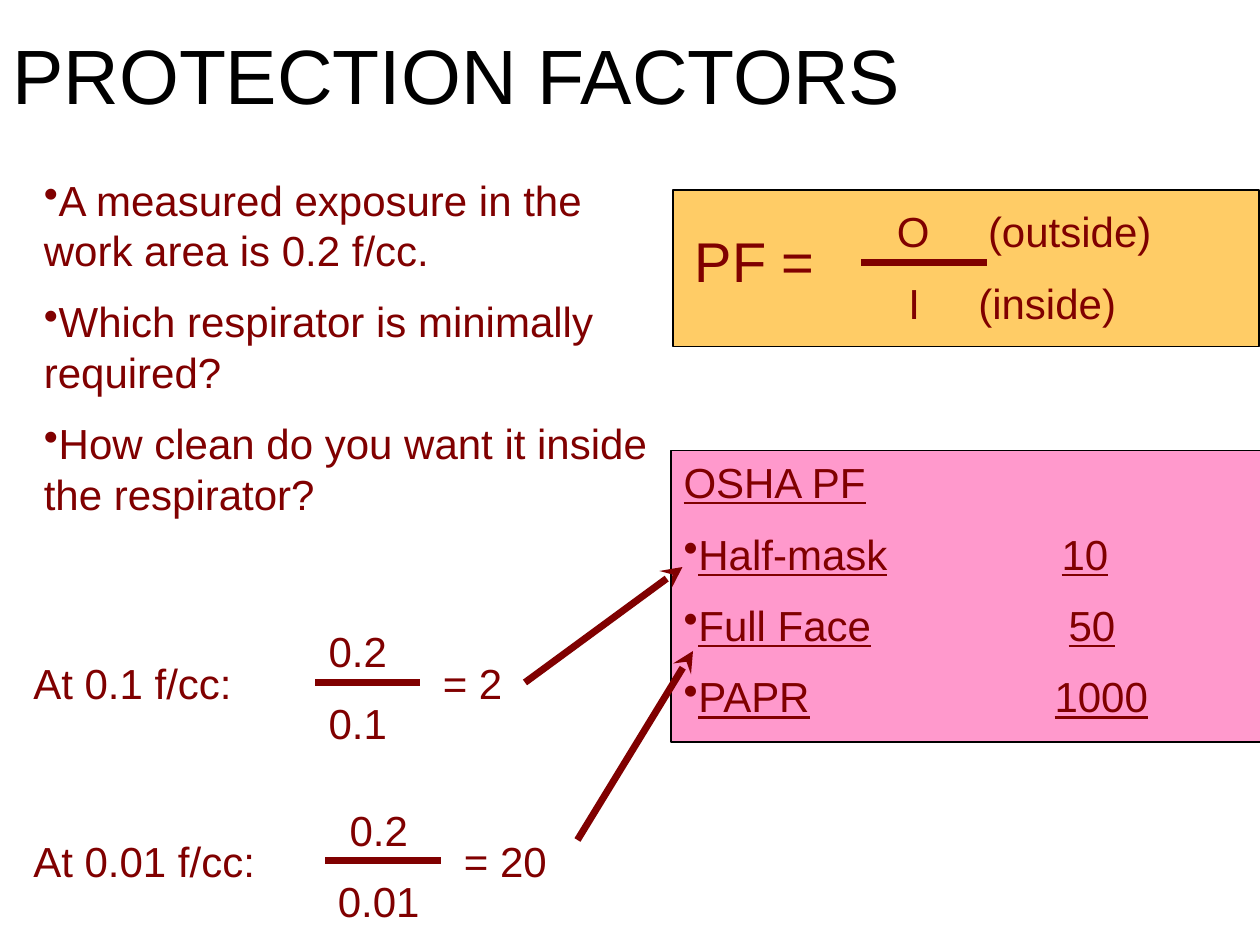
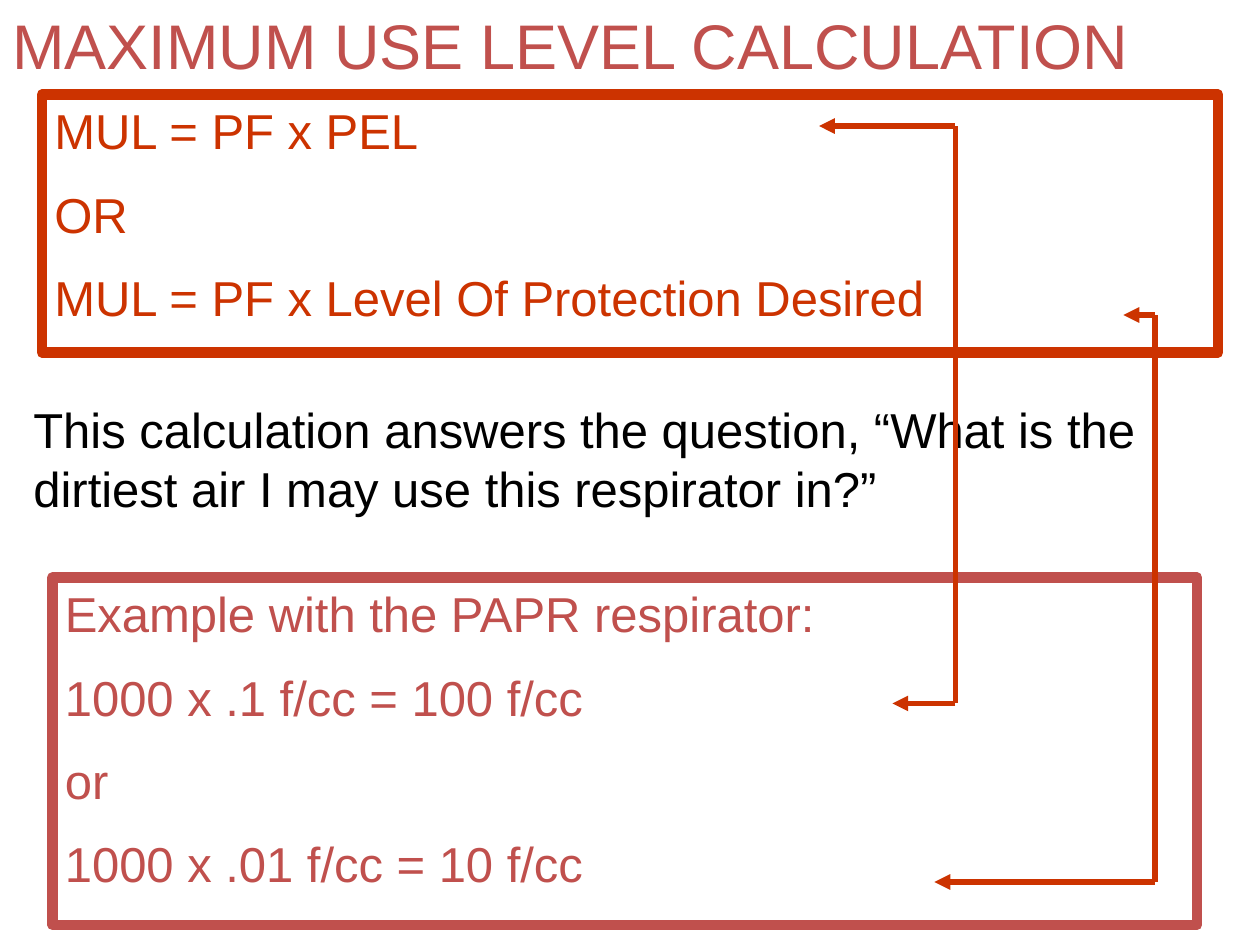
from lxml import etree
from pptx import Presentation
from pptx.dml.color import RGBColor
from pptx.enum import shapes, text
from pptx.oxml import ns
from pptx.util import Pt

COLOURS = {
    "black": "000000", "maroon": "800000", "gold": "FFCC66", "pink": "FF99CC",
    "rust": "CC3300", "brick": "C0504D",
}
FONT = "Arial"

# Places are (left, top, width, height) in points.
FACTORS_TITLE = ("PROTECTION FACTORS", (0, 12, 720, 60))
QUESTIONS = [
    "A measured exposure in the work area is 0.2 f/cc.",
    "Which respirator is minimally required?",
    "How clean do you want it inside the respirator?",
]
FORMULA_PANEL = (384.5, 108.5, 335, 89.5)
OSHA_HEADING = "OSHA PF"
OSHA_FACTORS = ["Half-mask\t10", "Full Face\t50", "PAPR\t1000"]
OSHA_TABS = [(), (216,), (220,), (212,)]
OSHA_PANEL = (383.5, 257.5, 337, 166.5)
EQUATIONS = [
    dict(y=150, label="PF =", label_left=390, label_size=32, bar=(492, 564),
         parts=["\tO\t(outside)", "\tI\t(inside)"], parts_left=492, parts_width=216,
         tabs=[(13.5, 65.5), (20, 60)]),
    dict(y=390, label="At 0.1 f/cc:", bar=(180, 240),
         parts=[" 0.2", " 0.1"], parts_left=174, result="= 2"),
    dict(y=492, label="At 0.01 f/cc:", bar=(186, 252),
         parts=[" 0.2", "0.01"], parts_left=186, result="= 20"),
]
RESULT_ARROWS = [((300, 390), (390, 324)), ((330, 480), (396, 372))]

LEVEL_TITLE = ("MAXIMUM USE LEVEL CALCULATION", (0, 0, 720, 50.5))
LEVEL_RULES = ["MUL = PF x PEL", "OR", "MUL = PF x Level Of Protection Desired"]
LEVEL_PANEL = (24, 54, 672, 147.5)
LEVEL_QUESTION = ("This calculation answers the question, “What is the dirtiest air "
                  "I may use this respirator in?”")
EXAMPLE = ["Example with the PAPR respirator:", "1000 x .1 f/cc = 100 f/cc", "or",
           "1000 x .01 f/cc = 10 f/cc"]
EXAMPLE_PANEL = (30, 330, 654, 198.5)
# Each link: x of its upright, then the two points its arrows reach.
LINKS = [(546, (468, 72), (510, 402)), (660, (642, 180), (534, 504))]


def rgb(colour):
    return RGBColor.from_string(COLOURS[colour])


def add_panel(slide, place, fill=None, line="black", weight=1):
    panel = slide.shapes.add_shape(shapes.MSO_SHAPE.RECTANGLE, *map(Pt, place))
    panel.shadow.inherit = False
    if fill:
        panel.fill.solid()
        panel.fill.fore_color.rgb = rgb(fill)
    else:
        panel.fill.background()
    panel.line.color.rgb = rgb(line)
    panel.line.width = Pt(weight)
    return panel


def add_text(slide, lines, place=None, holder=None, size=24, colour="maroon",
             underline=None, bullets_from=None, tabs=()):
    """Write lines into holder, or into a new text box at place."""
    holder = holder or slide.shapes.add_textbox(*map(Pt, place))
    frame = holder.text_frame
    frame.word_wrap = True
    frame.auto_size = text.MSO_AUTO_SIZE.SHAPE_TO_FIT_TEXT
    frame.vertical_anchor = text.MSO_ANCHOR.TOP
    for number, line in enumerate(lines):
        paragraph = frame.paragraphs[0] if number == 0 else frame.add_paragraph()
        paragraph.alignment = text.PP_ALIGN.LEFT
        paragraph.space_before = Pt(size / 2)
        run = paragraph.add_run()
        run.text = line
        run.font.name = FONT
        run.font.size = Pt(size)
        run.font.underline = underline
        run.font.color.rgb = rgb(colour)
        properties = paragraph._p.get_or_add_pPr()
        if bullets_from is not None and number >= bullets_from:
            etree.SubElement(properties, ns.qn("a:buChar"), char="•")
        if tabs and tabs[number]:
            stops = etree.SubElement(properties, ns.qn("a:tabLst"))
            for stop in tabs[number]:
                etree.SubElement(stops, ns.qn("a:tab"), pos=str(Pt(stop)), algn="l")


def add_line(slide, start, end, colour="maroon", weight=4, arrow=None):
    line = slide.shapes.add_connector(shapes.MSO_CONNECTOR.STRAIGHT,
                                      *map(Pt, (*start, *end)))
    line.line.color.rgb = rgb(colour)
    line.line.width = Pt(weight)
    if arrow:
        etree.SubElement(line.line._get_or_add_ln(), ns.qn("a:tailEnd"), type=arrow)
    etree.SubElement(line._element.spPr, ns.qn("a:effectLst"))


def add_equation(slide, y, label, bar, parts, parts_left, result=None,
                 label_left=12, label_size=24, parts_width=84, tabs=()):
    """Set label, fraction and result around a fraction bar at height y."""
    left, right = bar
    label_height = label_size * 1.5
    add_text(slide, [label], (label_left, y - label_size * 0.75, 160, label_height),
             size=label_size)
    add_line(slide, (left, y), (right, y))
    add_text(slide, parts, (parts_left, y - 36, parts_width, 80), tabs=tabs)
    if result:
        add_text(slide, [result], (right + 6, y - 18, 100, 36))


def add_title(slide, title, size, colour):
    words, place = title
    add_text(slide, [words], place, size=size, colour=colour)


def build_factors(slide):
    add_panel(slide, FORMULA_PANEL, fill="gold")
    add_title(slide, FACTORS_TITLE, 44, "black")
    add_text(slide, QUESTIONS, (18, 96, 360, 211), bullets_from=0)
    osha = add_panel(slide, OSHA_PANEL, fill="pink")
    add_text(slide, [OSHA_HEADING, *OSHA_FACTORS], holder=osha, underline=True,
             bullets_from=1, tabs=OSHA_TABS)
    for equation in EQUATIONS:
        add_equation(slide, **equation)
    for start, end in RESULT_ARROWS:
        add_line(slide, start, end, arrow="stealth")


def build_level(slide):
    add_title(slide, LEVEL_TITLE, 36, "brick")
    for lines, place, colour in ((LEVEL_RULES, LEVEL_PANEL, "rust"),
                                 (EXAMPLE, EXAMPLE_PANEL, "brick")):
        panel = add_panel(slide, place, line=colour, weight=6)
        add_text(slide, lines, holder=panel, size=28, colour=colour)
    add_text(slide, [LEVEL_QUESTION], (12, 225, 696, 74), size=28, colour="black")
    for x, upper, lower in LINKS:
        corners = [(x, upper[1]), (x, lower[1])]
        add_line(slide, *corners, colour="rust", weight=3)
        for corner, tip in zip(corners, (upper, lower)):
            add_line(slide, corner, tip, colour="rust", weight=3, arrow="triangle")


def main():
    deck = Presentation()
    deck.slide_width, deck.slide_height = Pt(720), Pt(540)
    for build in (build_factors, build_level):
        build(deck.slides.add_slide(deck.slide_layouts[6]))
    deck.save("out.pptx")


if __name__ == "__main__":
    main()
